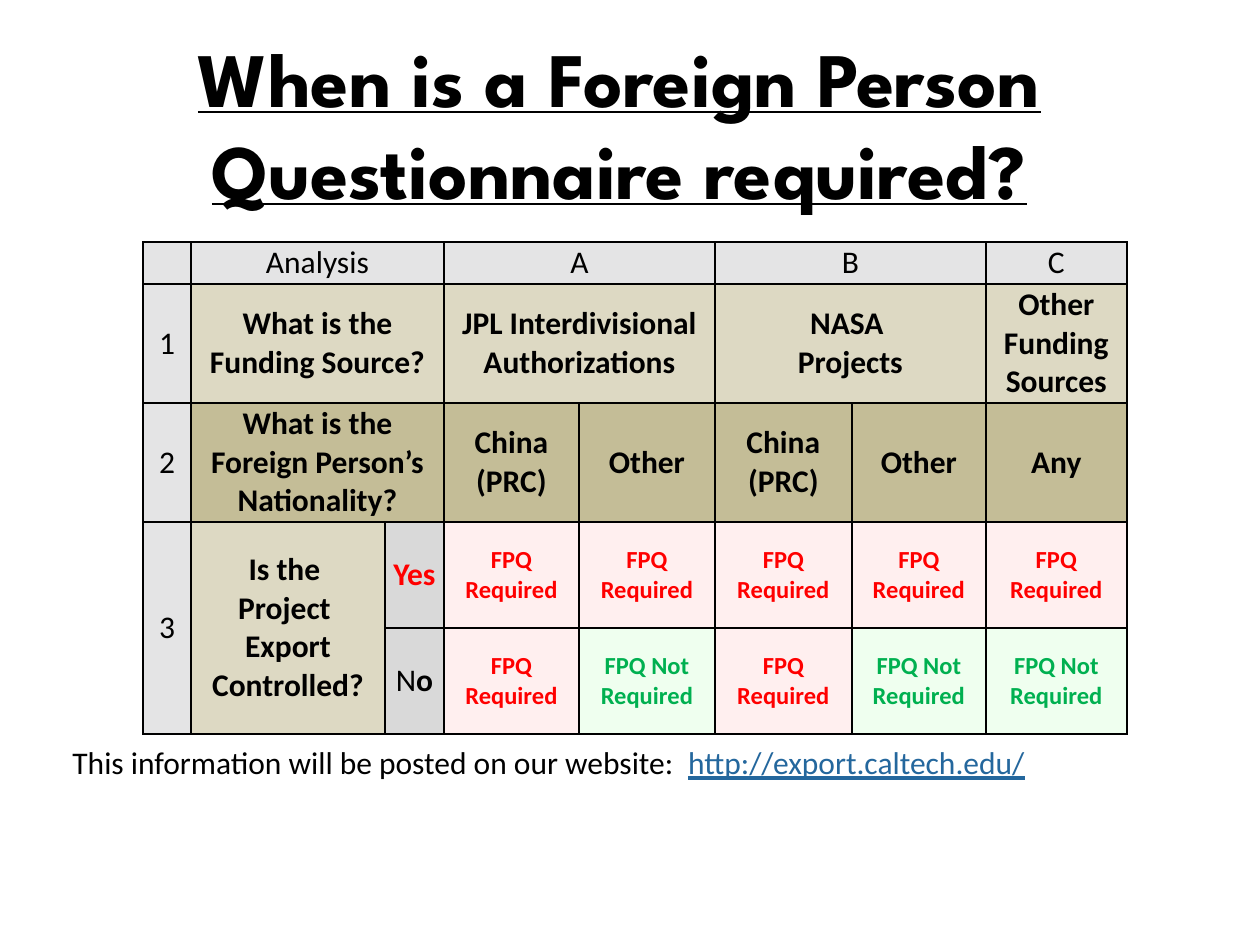
from lxml import etree
from pptx import Presentation
from pptx.dml.color import RGBColor
from pptx.enum.text import MSO_ANCHOR, PP_ALIGN
from pptx.oxml.ns import qn
from pptx.util import Emu, Pt

CENTER = PP_ALIGN.CENTER
MIDDLE = MSO_ANCHOR.MIDDLE
SCALE = 914400 / 126
COLORS = {
    "black": "000000", "red": "FF0000", "green": "00B050", "link": "24679D",
    "header": "E4E4E5", "sand": "DDD9C3", "khaki": "C4BD97", "grey": "D9D9D9",
    "pink": "FFEFEF", "mint": "EFFFEF",
}


def px(length):
    return Emu(round(length * SCALE))


def style_run(run, size, color="black", bold=False, underline=False, name="Calibri"):
    run.font.name = name
    run.font.size = Pt(size)
    run.font.bold = bold
    run.font.underline = underline
    run.font.color.rgb = RGBColor.from_string(COLORS[color])


presentation = Presentation()
presentation.slide_width = px(1260)
presentation.slide_height = px(945)
slide = presentation.slides.add_slide(presentation.slide_layouts[6])

title = slide.shapes.add_textbox(px(33), px(24), px(1173), px(86))
title.text_frame.word_wrap = True
paragraph = title.text_frame.paragraphs[0]
paragraph.text = "When is a Foreign Person Questionnaire required?"
paragraph.alignment = CENTER
style_run(paragraph.runs[0], 44, bold=True, underline=True, name="League Spartan")

REQUIRED = "FPQ Required"
NOT_REQUIRED = "FPQ Not Required"
column_widths = [48, 194, 59, 135, 136, 137, 134, 141]
row_heights = [42, 119, 119, 106, 106]
rows = [
    ["", "Analysis", "", "A", "", "B", "", "C"],
    ["1", "What is the Funding Source?", "", "JPL Interdivisional Authorizations", "",
     "NASA \nProjects", "", "Other Funding Sources"],
    ["2", "What is the Foreign Person’s Nationality?", "",
     "China (PRC)", "Other", "China (PRC)", "Other", "Any"],
    ["3", "Is the \nProject \nExport Controlled?", "Yes"] + [REQUIRED] * 5,
    ["", "", "No", REQUIRED, NOT_REQUIRED, REQUIRED, NOT_REQUIRED, NOT_REQUIRED],
]
row_fills = ["header", "sand", "khaki", "sand", "sand"]
answer_styles = {
    REQUIRED: (14, "red", "pink"),
    NOT_REQUIRED: (14, "green", "mint"),
    "Yes": (18, "red", "grey"),
    "No": (18, "black", "grey"),
}
merges = [(0, 1, 0, 2), (0, 3, 0, 4), (0, 5, 0, 6),
          (1, 1, 1, 2), (1, 3, 1, 4), (1, 5, 1, 6),
          (2, 1, 2, 2), (3, 0, 4, 0), (3, 1, 4, 1)]

table = slide.shapes.add_table(
    len(rows), len(column_widths), px(143), px(242),
    px(sum(column_widths)), px(sum(row_heights))).table
table.first_row = False
table.horz_banding = False
for column, width in zip(table.columns, column_widths):
    column.width = px(width)
for row, height in zip(table.rows, row_heights):
    row.height = px(height)

for row_index, texts in enumerate(rows):
    for column_index, text in enumerate(texts):
        cell = table.cell(row_index, column_index)
        is_header = row_index == 0 or column_index == 0
        default_fill = "header" if is_header else row_fills[row_index]
        size, color, fill = answer_styles.get(text, (18, "black", default_fill))
        cell.margin_left = cell.margin_right = px(6)
        cell.margin_top = cell.margin_bottom = px(1)
        cell.vertical_anchor = MIDDLE
        paragraph = cell.text_frame.paragraphs[0]
        paragraph.alignment = CENTER
        if text == "No":
            for letter in text:
                paragraph.add_run().text = letter
        else:
            paragraph.text = text
        for run in paragraph.runs:
            style_run(run, size, color, bold=not is_header and run.text != "N")
        properties = cell._tc.get_or_add_tcPr()
        for side in ("a:lnL", "a:lnR", "a:lnT", "a:lnB"):
            border = etree.SubElement(properties, qn(side), w=str(Pt(1)))
            solid_fill = etree.SubElement(border, qn("a:solidFill"))
            etree.SubElement(solid_fill, qn("a:srgbClr"), val=COLORS["black"])
        cell.fill.solid()
        cell.fill.fore_color.rgb = RGBColor.from_string(COLORS[fill])

for top, left, bottom, right in merges:
    table.cell(top, left).merge(table.cell(bottom, right))

website_note = slide.shapes.add_textbox(px(60), px(737), px(1023), px(50))
website_note.text_frame.word_wrap = True
paragraph = website_note.text_frame.paragraphs[0]
paragraph.text = "This information will be posted on our website:  "
style_run(paragraph.runs[0], 18)
address = paragraph.add_run()
address.text = "http://export.caltech.edu/"
style_run(address, 18, "link", underline=True)

presentation.save("out.pptx")
